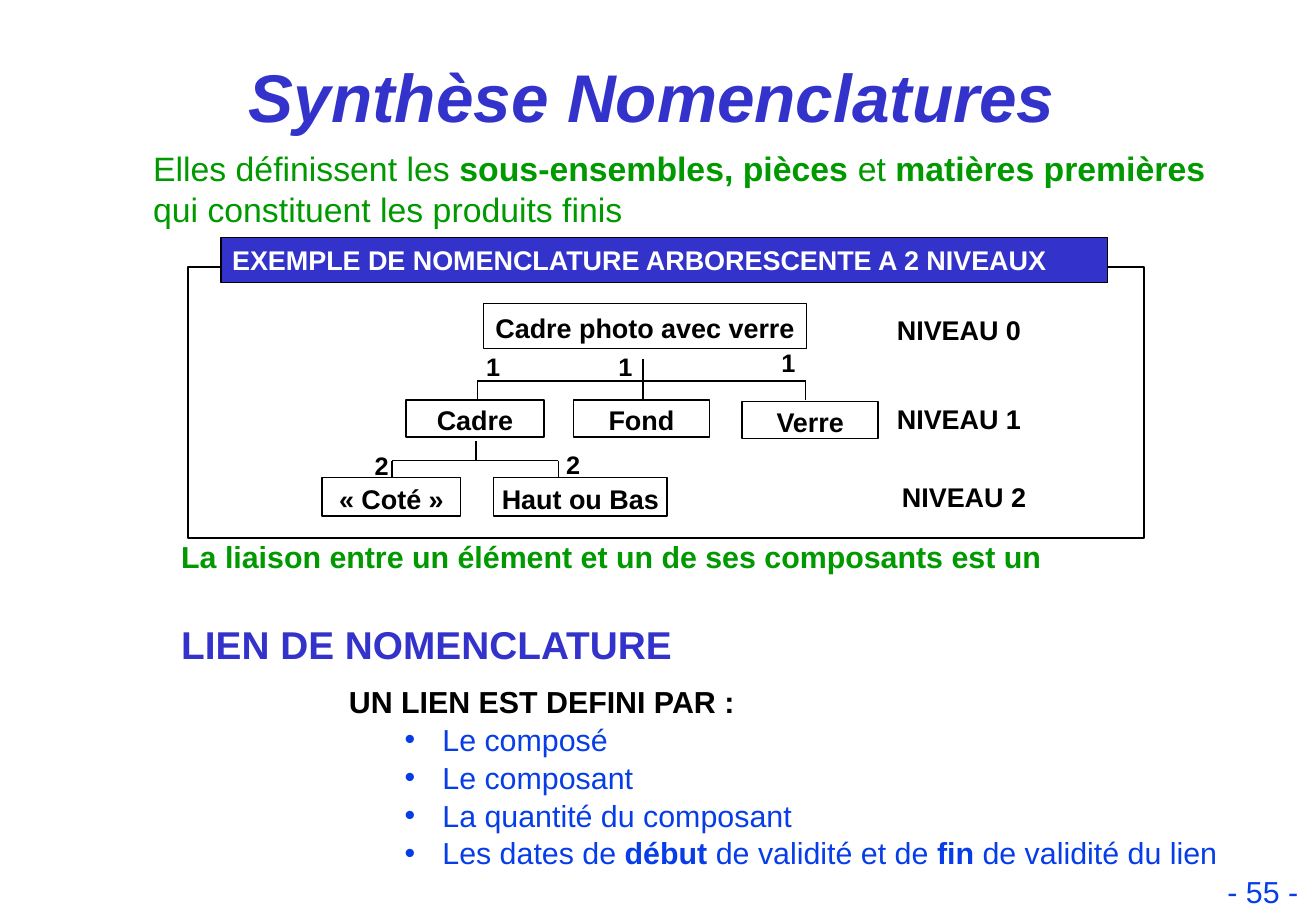
from dataclasses import dataclass

import pptx
import pptx.dml.color
import pptx.enum.shapes
import pptx.enum.text
import pptx.oxml.xmlchemy
import pptx.util

Pt = pptx.util.Pt
ALIGN = pptx.enum.text.PP_ALIGN
ANCHOR = pptx.enum.text.MSO_ANCHOR
FONT = "Arial"
COLOURS = {"blue": "3333CC", "bright": "063DE8", "green": "009900",
           "black": "000000", "white": "FFFFFF"}


@dataclass
class Span:
    text: str
    size: float = 16
    colour: str = "black"
    bold: bool = True
    italic: bool = False


@dataclass
class Area:
    left: float
    top: float
    width: float
    height: float


@dataclass
class Node:
    label: str
    area: Area
    line: float = 1


@dataclass
class Branch:
    stem: float
    top: float
    bar: float
    bottom: float
    children: tuple[float, ...]


@dataclass
class Item:
    spans: list[Span]
    before: float
    level: int = 0
    margin: float = 0
    indent: float = 0


def rgb(name: str) -> pptx.dml.color.RGBColor:
    return pptx.dml.color.RGBColor.from_string(COLOURS[name])


def add_spans(para, spans: list[Span]) -> None:
    for span in spans:
        run = para.add_run()
        run.text = span.text
        font = run.font
        font.name, font.size = FONT, Pt(span.size)
        font.bold, font.italic = span.bold, span.italic
        font.color.rgb = rgb(span.colour)


def set_frame(frame, anchor=ANCHOR.TOP, wrap: bool = True, side: float = 6.6) -> None:
    frame.auto_size = pptx.enum.text.MSO_AUTO_SIZE.NONE
    frame.word_wrap = wrap
    frame.vertical_anchor = anchor
    frame.margin_left = frame.margin_right = Pt(side)
    frame.margin_top = frame.margin_bottom = Pt(3.6)


def place(shape, area: Area) -> None:
    shape.left, shape.top = Pt(area.left), Pt(area.top)
    shape.width, shape.height = Pt(area.width), Pt(area.height)


def add_text(page, area: Area, spans: list[Span], align=ALIGN.LEFT, wrap: bool = False,
             before: float = 0) -> None:
    box = page.shapes.add_textbox(0, 0, 0, 0)
    place(box, area)
    set_frame(box.text_frame, wrap=wrap)
    para = box.text_frame.paragraphs[0]
    para.alignment = align
    para.space_before = Pt(before)
    add_spans(para, spans)


def add_box(page, area: Area, line: float, fill: str | None = None):
    box = page.shapes.add_shape(pptx.enum.shapes.MSO_SHAPE.RECTANGLE, 0, 0, 0, 0)
    place(box, area)
    box.shadow.inherit = False
    if fill:
        box.fill.solid()
        box.fill.fore_color.rgb = rgb(fill)
    else:
        box.fill.background()
    box.line.color.rgb = rgb("black")
    box.line.width = Pt(line)
    return box


def add_node(page, node: Node) -> None:
    frame = add_box(page, node.area, node.line).text_frame
    set_frame(frame, ANCHOR.MIDDLE, wrap=False, side=0)
    frame.margin_top, frame.margin_bottom = Pt(2), Pt(0)
    para = frame.paragraphs[0]
    para.alignment = ALIGN.CENTER
    add_spans(para, [Span(node.label)])


def add_line(page, x1: float, y1: float, x2: float, y2: float) -> None:
    line = page.shapes.add_connector(pptx.enum.shapes.MSO_CONNECTOR.STRAIGHT,
                                     Pt(x1), Pt(y1), Pt(x2), Pt(y2))
    line.line.color.rgb = rgb("black")
    line.line.width = Pt(1)
    line._element.spPr.append(pptx.oxml.xmlchemy.OxmlElement("a:effectLst"))


def add_branch(page, branch: Branch) -> None:
    add_line(page, branch.stem, branch.top, branch.stem, branch.bar)
    add_line(page, branch.children[0], branch.bar, branch.children[-1], branch.bar)
    for x in branch.children:
        add_line(page, x, branch.bar, x, branch.bottom)


def add_item(para, item: Item) -> None:
    para.level = item.level
    para.alignment = ALIGN.LEFT
    para.space_before = Pt(item.before)
    properties = para._p.get_or_add_pPr()
    properties.set("marL", str(int(Pt(item.margin))))
    properties.set("indent", str(int(Pt(item.indent))))
    bullet = pptx.oxml.xmlchemy.OxmlElement("a:buChar" if item.indent else "a:buNone")
    if item.indent:
        bullet.set("char", "•")
    properties.append(bullet)
    add_spans(para, item.spans)


def bullet_item(*parts: tuple[str, bool]) -> Item:
    spans = [Span(text, 18, "bright", bold) for text, bold in parts]
    return Item(spans, 0.9, 4, 154.8, -22.3)


LEAD = [Span(text, 20, "green", bold) for text, bold in (
    ("Elles définissent les ", False), ("sous-ensembles, pièces ", True), ("et ", False),
    ("matières premières ", True), ("qui constituent les produits finis", False))]

NODES = [
    Node("Cadre photo avec verre", Area(286.6, 180, 191.5, 26.6), 0.75),
    Node("Cadre", Area(240.5, 237, 82, 22)),
    Node("Fond", Area(340, 237, 80.5, 22)),
    Node("Verre", Area(440, 238, 80.5, 22)),
    Node("« Coté »", Area(191, 283, 82, 23)),
    Node("Haut ou Bas", Area(292.5, 283, 103, 23)),
]
BRANCHES = [Branch(381, 213, 226, 237, (283, 381, 477.5)),
            Branch(282, 261.5, 273, 283, (232.5, 331))]
LEVELS = [(525, 182), (525, 235), (528, 281.5)]
QUANTITIES = [("1", 281.5, 204.5), ("1", 360, 204.5), ("1", 456.5, 202.5),
              ("2", 329, 263), ("2", 215.5, 263.5)]

ITEMS = [
    Item([Span("La liaison entre un élément et un de ses composants est un", 18, "green")], 1),
    Item([Span("LIEN DE NOMENCLATURE", 23, "blue")], 27.5),
    Item([Span("UN LIEN EST DEFINI PAR :", 18)], 9, 3, 99.4),
    bullet_item(("Le composé", False)),
    bullet_item(("Le composant", False)),
    bullet_item(("La quantité du composant", False)),
    bullet_item(("Les dates de ", False), ("début ", True), ("de validité et de ", False),
                ("fin ", True), ("de validité du lien", False)),
]


def main() -> None:
    deck = pptx.Presentation()
    deck.slide_width, deck.slide_height = Pt(780), Pt(540)
    page = deck.slides.add_slide(deck.slide_layouts[1])

    # Title and introduction
    title, body = page.shapes.title, page.placeholders[1]
    place(title, Area(52.5, 26.6, 667.5, 60.5))
    set_frame(title.text_frame, ANCHOR.MIDDLE)
    title_para = title.text_frame.paragraphs[0]
    title_para.alignment = ALIGN.CENTER
    add_spans(title_para, [Span("Synthèse Nomenclatures", 40, "blue", italic=True)])
    add_text(page, Area(84.2, 84.2, 642.5, 55.5), LEAD, wrap=True, before=1)

    # Definition of a link
    place(body, Area(100.8, 315.4, 665.3, 201))
    set_frame(body.text_frame)
    for index, item in enumerate(ITEMS):
        frame = body.text_frame
        add_item(frame.add_paragraph() if index else frame.paragraphs[0], item)

    # Example frame and its banner
    add_box(page, Area(111.6, 158.4, 566.6, 160.6), 1)
    banner = add_box(page, Area(131, 141, 525.6, 26.6), 0.75, "blue").text_frame
    set_frame(banner)
    banner.paragraphs[0].alignment = ALIGN.LEFT
    add_spans(banner.paragraphs[0],
              [Span("EXEMPLE DE NOMENCLATURE ARBORESCENTE A 2 NIVEAUX", 16, "white")])

    # Tree with its levels and quantities
    for branch in BRANCHES:
        add_branch(page, branch)
    for node in NODES:
        add_node(page, node)
    for number, (left, top) in enumerate(LEVELS):
        add_text(page, Area(left, top, 87, 26), [Span(f"NIVEAU {number}")])
    for quantity, left, top in QUANTITIES:
        add_text(page, Area(left, top, 21.6, 24.5), [Span(quantity, 15)])

    # Page number
    add_text(page, Area(688.3, 514, 87.8, 26), [Span("- 55 -", 18, "bright", False)],
             ALIGN.RIGHT, wrap=True)
    deck.save("out.pptx")


if __name__ == "__main__":
    main()
